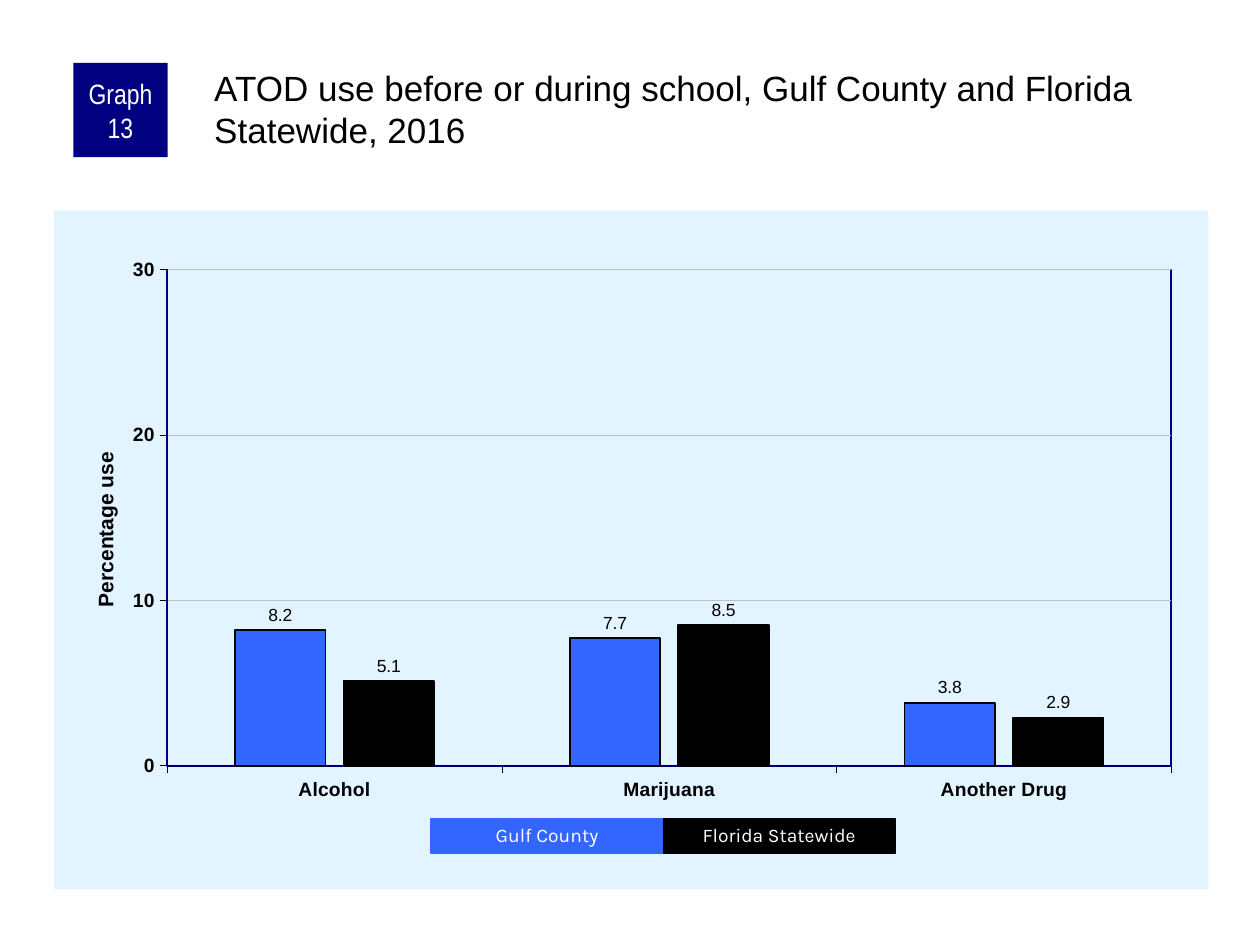
from lxml import etree
from pptx import Presentation
from pptx import util as u
from pptx.chart.data import CategoryChartData
from pptx.dml.color import RGBColor
from pptx.enum import chart as ch, shapes, text
from pptx.oxml import parse_xml
from pptx.oxml.ns import nsdecls, qn

NAVY = RGBColor(0x00, 0x00, 0x80)
BLUE = RGBColor(0x33, 0x66, 0xFF)
BLACK = RGBColor(0x00, 0x00, 0x00)
WHITE = RGBColor(0xFF, 0xFF, 0xFF)
SKY = RGBColor(0xE1, 0xF4, 0xFF)
SILVER = RGBColor(0xC0, 0xC0, 0xC0)


def area_format(fill, line=None, width=0):
    inside = f'<a:solidFill><a:srgbClr val="{fill}"/></a:solidFill>' if fill else "<a:noFill/>"
    edge = f'<a:solidFill><a:srgbClr val="{line}"/></a:solidFill>' if line else "<a:noFill/>"
    return parse_xml(f'<c:spPr {nsdecls("c", "a")}>{inside}'
                     f'<a:ln w="{u.Pt(width)}">{edge}</a:ln></c:spPr>')


def set_layout(parent, index, **settings):
    for old in parent.findall(qn("c:layout")):
        parent.remove(old)
    layout = etree.Element(qn("c:layout"))
    manual = etree.SubElement(layout, qn("c:manualLayout"))
    for name, value in settings.items():
        etree.SubElement(manual, qn(f"c:{name}")).set("val", str(value))
    parent.insert(index, layout)


class GraphSlide:
    font = "Arial"

    def __init__(self, deck):
        self.slide = deck.slides.add_slide(deck.slide_layouts[6])

    def style(self, font, size, color, name=None, bold=False):
        font.name = name or self.font
        font.size = u.Pt(size)
        font.bold = bold
        font.color.rgb = color

    def fill_text(self, frame, words, size, color, name=None, align=text.PP_ALIGN.LEFT,
                  insets=(0, 0, 0, 0), spacing=None):
        frame.word_wrap = True
        (frame.margin_left, frame.margin_top,
         frame.margin_right, frame.margin_bottom) = [u.Cm(i) for i in insets]
        frame.text = words
        paragraph = frame.paragraphs[0]
        paragraph.alignment = align
        paragraph.line_spacing = spacing
        self.style(paragraph.runs[0].font, size, color, name)

    def heading(self, box, words):
        frame = self.slide.shapes.add_textbox(*map(u.Cm, box)).text_frame
        self.fill_text(frame, words, 20, BLACK, insets=(0.08, 0.08, 0, 0))

    def block(self, box, words, fill, size, name, outlined=False, spacing=None):
        block = self.slide.shapes.add_shape(shapes.MSO_SHAPE.RECTANGLE, *map(u.Cm, box))
        block.shadow.inherit = False
        block.fill.solid()
        block.fill.fore_color.rgb = fill
        if outlined:
            block.line.color.rgb = fill
            block.line.width = u.Pt(0.75)
        else:
            block.line.fill.background()
        block.text_frame.vertical_anchor = text.MSO_ANCHOR.MIDDLE
        self.fill_text(block.text_frame, words, size, WHITE, name, text.PP_ALIGN.CENTER,
                       (0.13, 0, 0.13, 0), spacing)

    def axis(self, axis):
        axis.major_tick_mark = ch.XL_TICK_MARK.OUTSIDE
        axis.minor_tick_mark = ch.XL_TICK_MARK.NONE
        axis.format.line.color.rgb = BLACK
        axis.format.line.width = u.Pt(0.25)
        self.style(axis.tick_labels.font, 11, BLACK, bold=True)

    def axis_title(self, axis, words):
        frame = axis.axis_title.text_frame
        frame.text = words
        self.style(frame.paragraphs[0].runs[0].font, 12, BLACK, bold=True)
        title = axis.axis_title._element
        body = title.find(".//" + qn("a:bodyPr"))
        body.set("rot", "-5400000")
        body.set("vert", "horz")
        set_layout(title, 1, xMode="edge", yMode="edge", x=0.03, y=0.35)

    def columns(self, box, categories, groups):
        data = CategoryChartData(number_format="0.0")
        data.categories = categories
        for name, values, _ in groups:
            data.add_series(name, values)
        chart = self.slide.shapes.add_chart(
            ch.XL_CHART_TYPE.COLUMN_CLUSTERED, *map(u.Cm, box), data).chart
        chart.has_title = chart.has_legend = False
        self.style(chart.font, 11.5, BLACK)

        plot = chart.plots[0]
        plot.gap_width, plot.overlap = 150, -20
        plot.vary_by_categories = False
        for series, (_, _, color) in zip(plot.series, groups):
            series.format.fill.solid()
            series.format.fill.fore_color.rgb = color
            series.format.line.color.rgb = BLACK
            series.format.line.width = u.Pt(1)
            labels = series.data_labels
            labels.show_value = True
            labels.number_format, labels.number_format_is_linked = "0.0", False
            labels.position = ch.XL_LABEL_POSITION.OUTSIDE_END
            self.style(labels.font, 10, BLACK)

        self.axis(chart.category_axis)
        percent = chart.value_axis
        self.axis(percent)
        percent.minimum_scale, percent.maximum_scale, percent.major_unit = 0, 30, 10
        percent.tick_labels.number_format = "0"
        percent.tick_labels.number_format_is_linked = False
        percent.has_major_gridlines = True
        percent.major_gridlines.format.line.color.rgb = SILVER
        percent.major_gridlines.format.line.width = u.Pt(0.25)
        self.axis_title(percent, "Percentage use")

        body = chart._chartSpace.find(qn("c:chart"))
        body.addnext(area_format(SKY))
        area = body.find(qn("c:plotArea"))
        area.append(area_format(None, NAVY, 1))
        set_layout(area, 0, layoutTarget="inner", xMode="edge", yMode="edge",
                   x=0.098, y=0.087, w=0.87, h=0.731)


def main():
    deck = Presentation()
    deck.slide_width, deck.slide_height = u.Cm(25.4), u.Cm(19.05)
    graph = GraphSlide(deck)
    groups = [("Gulf County", (8.2, 7.7, 3.8), BLUE),
              ("Florida Statewide", (5.1, 8.5, 2.9), BLACK)]
    graph.columns((1.09, 4.24, 23.27, 13.69),
                  ("Alcohol", "Marijuana", "Another Drug"), groups)
    graph.block((1.48, 1.27, 1.9, 1.9), "Graph 13", NAVY, 16, "Arial Narrow")
    graph.heading((4.24, 1.27, 20.12, 2.11),
                  "ATOD use before or during school, Gulf County and Florida Statewide, 2016")
    key_width = 4.68
    for place, (name, _, color) in enumerate(groups):
        graph.block((8.69 + place * key_width, 16.51, key_width, 0.69), name, color,
                    11, "Karla", outlined=True, spacing=0.9)
    deck.save("out.pptx")


if __name__ == "__main__":
    main()
